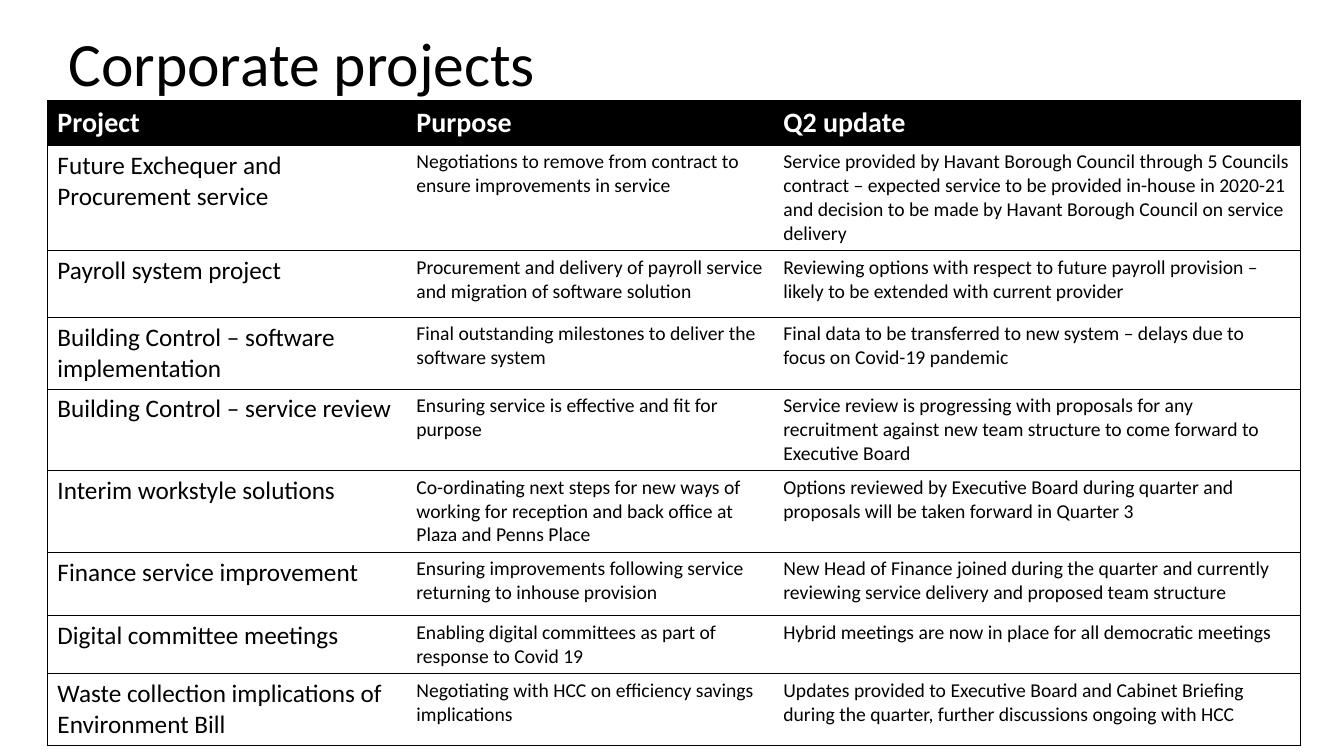
from lxml import etree
from pptx import Presentation
from pptx.dml.color import RGBColor
from pptx.enum.text import MSO_ANCHOR
from pptx.oxml.ns import qn
from pptx.util import Inches, Pt

TITLE = "Corporate projects"
HEADINGS = ("Project", "Purpose", "Q2 update")
PROJECTS = [
    ("Future Exchequer and Procurement service",
     "Negotiations to remove from contract to ensure improvements in service",
     "Service provided by Havant Borough Council through 5 Councils contract – expected service "
     "to be provided in-house in 2020-21 and decision to be made by Havant Borough Council on "
     "service delivery"),
    ("Payroll system project",
     "Procurement and delivery of payroll service and migration of software solution",
     "Reviewing options with respect to future payroll provision – likely to be extended with "
     "current provider"),
    ("Building Control – software implementation",
     "Final outstanding milestones to deliver the software system",
     "Final data to be transferred to new system – delays due to focus on Covid-19 pandemic"),
    ("Building Control – service review",
     "Ensuring service is effective and fit for purpose",
     "Service review is progressing with proposals for any recruitment against new team "
     "structure to come forward to Executive Board"),
    ("Interim workstyle solutions",
     "Co-ordinating next steps for new ways of working for reception and back office at Plaza "
     "and Penns Place",
     "Options reviewed by Executive Board during quarter and proposals will be taken forward in "
     "Quarter 3"),
    ("Finance service improvement",
     "Ensuring improvements following service returning to inhouse provision",
     "New Head of Finance joined during the quarter and currently reviewing service delivery "
     "and proposed team structure"),
    ("Digital committee meetings",
     "Enabling digital committees as part of response to Covid 19",
     "Hybrid meetings are now in place for all democratic meetings"),
    ("Waste collection implications of Environment Bill",
     "Negotiating with HCC on efficiency savings implications",
     "Updates provided to Executive Board and Cabinet Briefing during the quarter, further "
     "discussions ongoing with HCC"),
]
COLUMN_WIDTHS = (3.56, 3.64, 5.23)
ROW_HEIGHTS = (0.38, 1, 0.66, 0.69, 0.77, 0.8, 0.63, 0.56, 0.69)

FONT = "Calibri"
HEADING_SIZE, PROJECT_SIZE, DETAIL_SIZE = 20, 18, 14
BLACK = RGBColor(0, 0, 0)
WHITE = RGBColor(255, 255, 255)
MIDDLE = MSO_ANCHOR.MIDDLE
PLAIN_TABLE_STYLE = "{2D5ABB26-0587-4C30-8999-92F81FD0307C}"


def style_text(paragraph, size, color, bold=False):
    font = paragraph.runs[0].font
    font.name, font.size, font.bold = FONT, Pt(size), bold
    font.color.rgb = color


def add_borders(cell, sides):
    properties = cell._tc.get_or_add_tcPr()
    for position, side in enumerate(sides):
        line = etree.Element(qn(f"a:ln{side}"), w=str(Pt(0.5)))
        fill = etree.SubElement(line, qn("a:solidFill"))
        etree.SubElement(fill, qn("a:srgbClr"), val=str(BLACK))
        properties.insert(position, line)


def add_projects(slide):
    rows = [HEADINGS] + PROJECTS
    last_column = len(HEADINGS) - 1
    frame = slide.shapes.add_table(
        len(rows), len(HEADINGS), Inches(0.47), Inches(1),
        Inches(sum(COLUMN_WIDTHS)), Inches(sum(ROW_HEIGHTS)))
    table = frame.table
    table.horz_banding = False
    table._tbl.tblPr.find(qn("a:tableStyleId")).text = PLAIN_TABLE_STYLE
    for column, width in zip(table.columns, COLUMN_WIDTHS):
        column.width = Inches(width)
    for r, (row, height) in enumerate(zip(rows, ROW_HEIGHTS)):
        table.rows[r].height = Inches(height)
        for c, wording in enumerate(row):
            cell = table.cell(r, c)
            cell.text_frame.text = wording
            paragraph = cell.text_frame.paragraphs[0]
            if r == 0:
                cell.fill.solid()
                cell.fill.fore_color.rgb = BLACK
                style_text(paragraph, HEADING_SIZE, WHITE, True)
            else:
                cell.fill.background()
                style_text(paragraph, DETAIL_SIZE if c else PROJECT_SIZE, BLACK)
            left = "L" if c == 0 else ""
            right = "R" if c == last_column else ""
            add_borders(cell, left + right + "TB")


def add_title(slide):
    title = slide.shapes.add_textbox(Inches(0.58), Inches(0.11), Inches(11.5), Inches(1.1))
    title.text_frame.word_wrap = True
    title.text_frame.vertical_anchor = MIDDLE
    title.text_frame.text = TITLE
    paragraph = title.text_frame.paragraphs[0]
    paragraph.line_spacing = 0.9
    style_text(paragraph, 44, BLACK)


def main():
    deck = Presentation()
    deck.slide_width, deck.slide_height = Inches(13.33), Inches(7.5)
    slide = deck.slides.add_slide(deck.slide_layouts[6])
    add_projects(slide)
    add_title(slide)
    deck.save("out.pptx")


if __name__ == "__main__":
    main()
